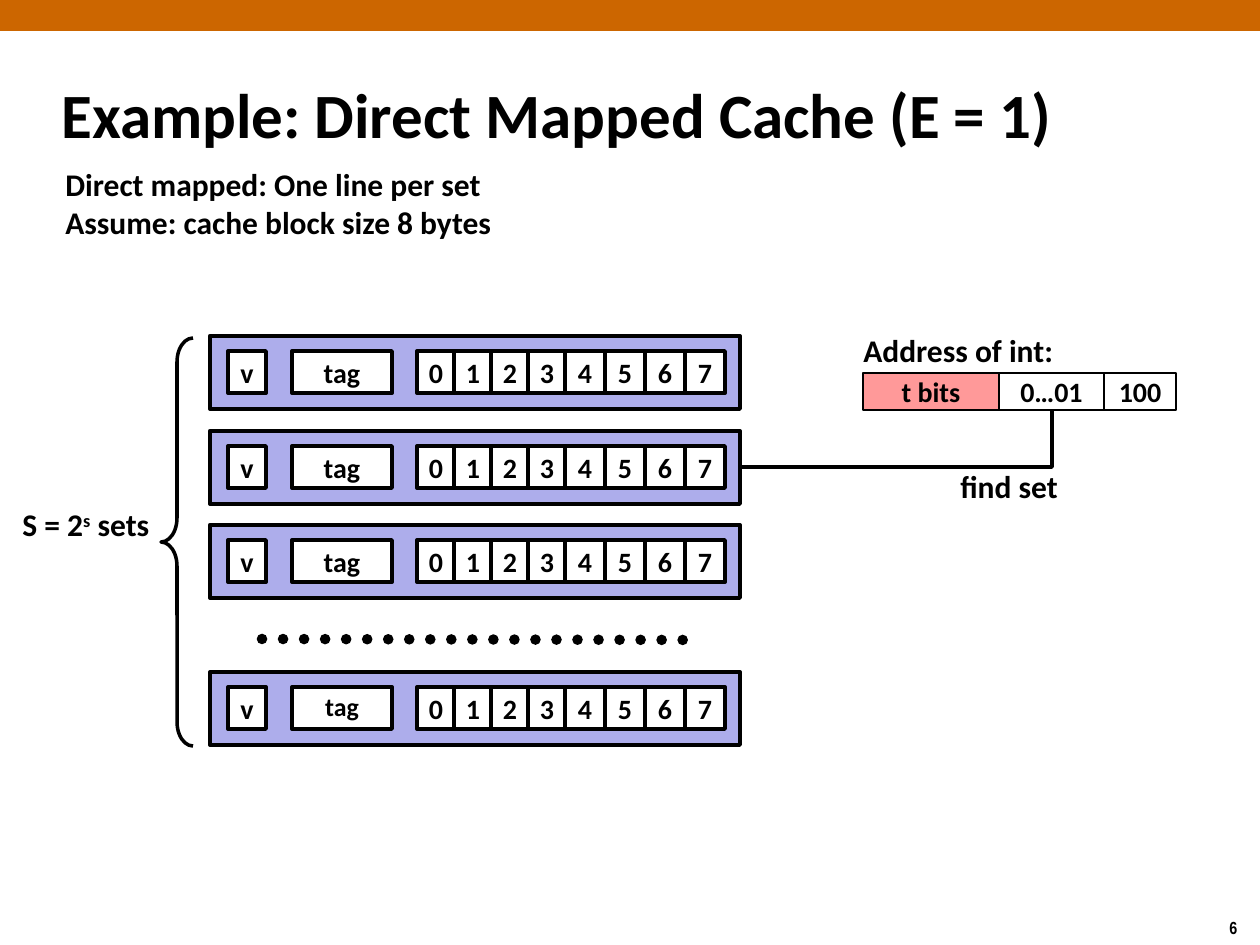
from dataclasses import dataclass

from lxml.etree import SubElement
from pptx import Presentation
from pptx.dml.color import RGBColor
from pptx.enum.dml import MSO_LINE
from pptx.enum.shapes import MSO_CONNECTOR, MSO_SHAPE
from pptx.enum.text import MSO_ANCHOR, MSO_AUTO_SIZE, PP_ALIGN
from pptx.oxml.ns import qn
from pptx.util import Emu, Pt

PX_PER_INCH = 126


@dataclass(frozen=True)
class Theme:
    ink: str = "000000"
    paper: str = "FFFFFF"
    banner: str = "CC6600"
    cache_set: str = "ADADEB"
    tag_bits: str = "FF9999"
    font: str = "Calibri"
    number_font: str = "Arial Narrow"
    title_size: float = 36
    label_size: float = 18
    cell_size: float = 16
    small_cell_size: float = 14.8
    number_size: float = 10
    cell_line: float = 2.25
    link_line: float = 2
    address_line: float = 1
    dot_line: float = 6


def px(length):
    return Emu(round(length * 914400 / PX_PER_INCH))


def write_text(frame, text, *, size, font, color, align=PP_ALIGN.LEFT,
               anchor=MSO_ANCHOR.TOP, wrap=False, spacing=None):
    frame.word_wrap = wrap
    frame.vertical_anchor = anchor
    for index, content in enumerate(text.split("\n")):
        paragraph = frame.add_paragraph() if index else frame.paragraphs[0]
        paragraph.alignment = align
        if spacing:
            paragraph.line_spacing = spacing
        for part, words in enumerate(content.split("^")):
            run = paragraph.add_run()
            run.text = words
            run.font.name = font
            run.font.size = Pt(size)
            run.font.bold = True
            run.font.color.rgb = RGBColor.from_string(color)
            if part % 2:
                run._r.get_or_add_rPr().set("baseline", "30000")


class CacheSlide:
    def __init__(self, slide, theme):
        self.shapes = slide.shapes
        self.theme = theme

    def stroke(self, line, width):
        line.color.rgb = RGBColor.from_string(self.theme.ink)
        line.width = Pt(width)

    def box(self, left, top, width, height, fill, line_width=None):
        box = self.shapes.add_shape(
            MSO_SHAPE.RECTANGLE, px(left), px(top), px(width), px(height))
        box.shadow.inherit = False
        box.fill.solid()
        box.fill.fore_color.rgb = RGBColor.from_string(fill)
        if line_width:
            self.stroke(box.line, line_width)
        else:
            box.line.fill.background()
        return box

    def cell(self, left, top, width, height, text, fill=None, line_width=None,
             size=None, wrap=False, spacing=None):
        theme = self.theme
        cell = self.box(left, top, width, height, fill or theme.paper,
                        line_width or theme.cell_line)
        write_text(cell.text_frame, text, size=size or theme.cell_size,
                   font=theme.font, color=theme.ink, align=PP_ALIGN.CENTER,
                   anchor=MSO_ANCHOR.MIDDLE, wrap=wrap, spacing=spacing)

    def label(self, left, top, width, height, text, size=None, font=None):
        theme = self.theme
        frame = self.shapes.add_textbox(
            px(left), px(top), px(width), px(height)).text_frame
        write_text(frame, text, size=size or theme.label_size,
                   font=font or theme.font, color=theme.ink)
        frame.auto_size = MSO_AUTO_SIZE.SHAPE_TO_FIT_TEXT

    def title(self, left, top, width, height, text):
        theme = self.theme
        frame = self.shapes.add_textbox(
            px(left), px(top), px(width), px(height)).text_frame
        write_text(frame, text, size=theme.title_size, font=theme.font,
                   color=theme.ink, anchor=MSO_ANCHOR.MIDDLE, wrap=True)

    def brace(self, left, top, width, height):
        brace = self.shapes.add_shape(
            MSO_SHAPE.LEFT_BRACE, px(left), px(top), px(width), px(height))
        brace.shadow.inherit = False
        brace.adjustments[0] = 0.75
        brace.fill.background()
        self.stroke(brace.line, self.theme.link_line)

    def connector(self, kind, left, top, right, bottom, width):
        connector = self.shapes.add_connector(
            kind, px(left), px(top), px(right), px(bottom))
        self.stroke(connector.line, width)
        SubElement(connector._element.spPr, qn("a:effectLst"))
        return connector

    def dotted_line(self, left, top, right, bottom):
        dots = self.connector(MSO_CONNECTOR.STRAIGHT, left, top, right, bottom,
                              self.theme.dot_line)
        dots.line.dash_style = MSO_LINE.ROUND_DOT
        dots._element.spPr.find(qn("a:ln")).set("cap", "rnd")

    def down_then_left(self, start_x, start_y, end_x, end_y):
        across, down = start_x - end_x, end_y - start_y
        shift = (across - down) / 2
        left, top = end_x + shift, start_y - shift
        link = self.connector(MSO_CONNECTOR.ELBOW, left, top, left + down,
                              top + across, self.theme.link_line)
        properties = link._element.spPr
        properties.find(qn("a:xfrm")).set("rot", "5400000")
        properties.find(qn("a:prstGeom")).set("prst", "bentConnector2")

    def cache_set(self, top, **tag_format):
        self.box(210, top, 530, 73, self.theme.cache_set, self.theme.cell_line)
        cell_top, cell_height = top + 15, 42
        self.cell(228, cell_top, 38, cell_height, "v")
        self.cell(292, cell_top, 100, cell_height, "tag", **tag_format)
        for byte in range(8):
            left = 417 + 37 * min(byte, 4) + 40 * max(byte - 4, 0)
            width = 38 if byte < 4 else 40
            self.cell(left, cell_top, width, cell_height, str(byte))


def main():
    theme = Theme()
    deck = Presentation()
    deck.slide_width, deck.slide_height = px(1260), px(945)
    page = CacheSlide(deck.slides.add_slide(deck.slide_layouts[6]), theme)

    page.box(0, 0, 1260, 31, theme.banner)
    page.label(1217, 911, 43, 34, "6", size=theme.number_size,
               font=theme.number_font)
    page.title(49, 61, 1046, 105, "Example: Direct Mapped Cache (E = 1)")
    page.label(53, 159, 455, 89,
               "Direct mapped: One line per set\nAssume: cache block size 8 bytes")

    page.brace(161, 338, 32, 408)
    page.label(10, 499, 155, 50, "S = 2^s^ sets")
    for top in (336, 431, 525):
        page.cache_set(top)
    page.dotted_line(262, 639, 693, 640)
    page.cache_set(672, size=theme.small_cell_size, spacing=0.9)

    page.label(851, 325, 217, 50, "Address of int:")
    field_left = 863
    for bits, width, fill in (("t bits", 136, theme.tag_bits),
                              ("0…01", 105, theme.paper),
                              ("100", 72, theme.paper)):
        page.cell(field_left, 373, width, 37, bits, fill=fill,
                  line_width=theme.address_line, wrap=True)
        field_left += width
    page.down_then_left(1052, 410, 741, 467)
    page.label(948, 461, 123, 50, "find set")

    deck.save("out.pptx")


if __name__ == "__main__":
    main()
